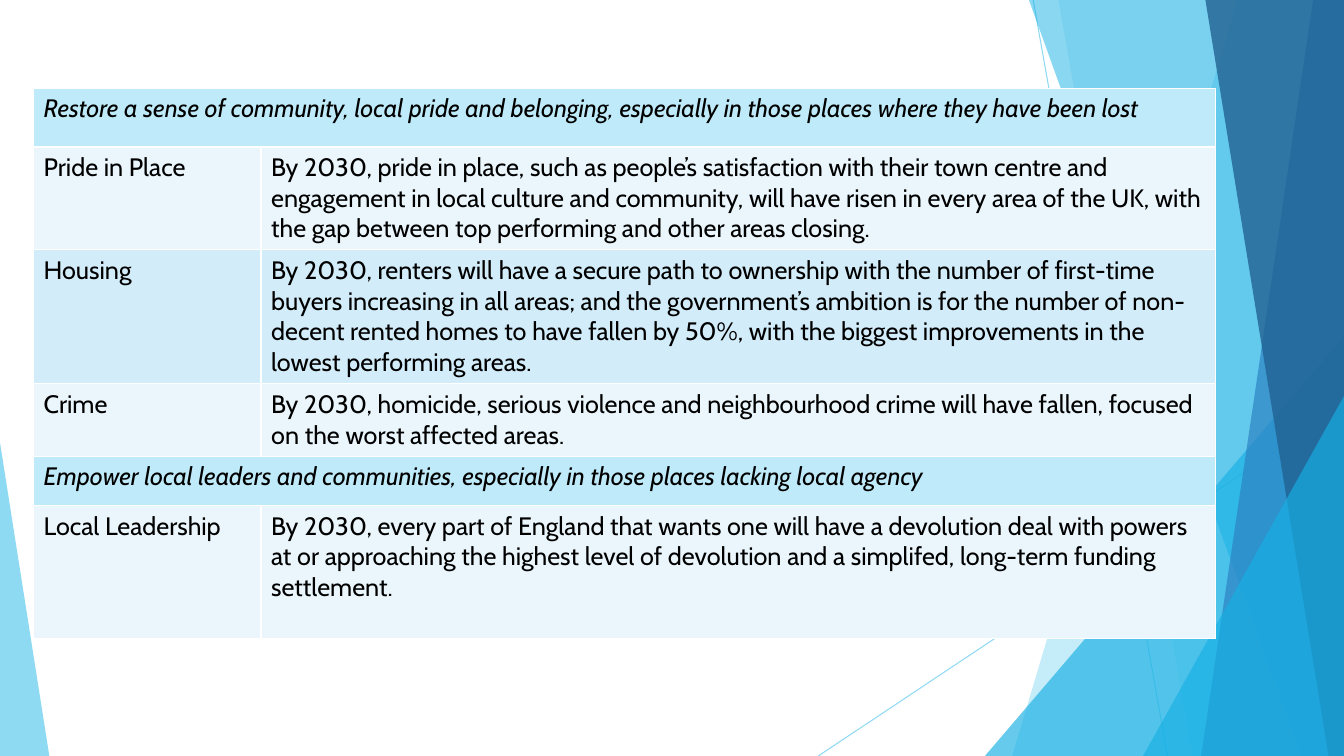
from lxml.etree import SubElement
from pptx import Presentation
from pptx.dml.color import RGBColor
from pptx.enum.shapes import MSO_CONNECTOR as Connector, MSO_SHAPE as Shape
from pptx.oxml import parse_xml
from pptx.oxml.ns import nsdecls, qn
from pptx.util import Pt

WIDTH, HEIGHT = 960, 540
FONT = "Cabin"
BLACK = RGBColor(0x00, 0x00, 0x00)
SKY = RGBColor(0x5F, 0xCB, 0xEF)
CYAN = RGBColor(0x17, 0xB0, 0xE4)
BLUE = RGBColor(0x2E, 0x83, 0xC3)
NAVY = RGBColor(0x22, 0x62, 0x92)
HEADING_FILL = RGBColor(0xBF, 0xEA, 0xF9)
PALE_FILL = RGBColor(0xEA, 0xF6, 0xFC)
TINTED_FILL = RGBColor(0xD2, 0xEC, 0xF9)

COLUMN_WIDTHS = [162.5, 682]
MISSIONS = [
    (42, HEADING_FILL, [
        "Restore a sense of community, local pride and belonging, especially in "
        "those places where they have been lost"]),
    (73.5, PALE_FILL, [
        "Pride in Place",
        "By 2030, pride in place, such as people’s satisfaction with their town "
        "centre and engagement in local culture and community, will have risen in "
        "every area of the UK, with the gap between top performing and other areas "
        "closing."]),
    (95.75, TINTED_FILL, [
        "Housing",
        "By 2030, renters will have a secure path to ownership with the number of "
        "first-time buyers increasing in all areas; and the government’s ambition "
        "is for the number of non-decent rented homes to have fallen by 50%, with "
        "the biggest improvements in the lowest performing areas."]),
    (51.75, PALE_FILL, [
        "Crime",
        "By 2030, homicide, serious violence and neighbourhood crime will have "
        "fallen, focused on the worst affected areas."]),
    (35.25, HEADING_FILL, [
        "Empower local leaders and communities, especially in those places lacking "
        "local agency"]),
    (95, PALE_FILL, [
        "Local Leadership",
        "By 2030, every part of England that wants one will have a devolution deal "
        "with powers at or approaching the highest level of devolution and a "
        "simplifed, long-term funding settlement."]),
]


def set_opacity(shape, percent):
    for color in shape.element.iter(qn("a:srgbClr")):
        SubElement(color, qn("a:alpha")).set("val", str(percent * 1000))


def paint(shape, color, opacity):
    shape.shadow.inherit = False
    shape.fill.solid()
    shape.fill.fore_color.rgb = color
    shape.line.fill.background()
    set_opacity(shape, opacity)


def add_ray(slide, start, end):
    ray = slide.shapes.add_connector(
        Connector.STRAIGHT, *(Pt(value) for value in start + end))
    ray.line.color.rgb = SKY
    ray.line.width = Pt(0.75)
    SubElement(ray.element.spPr, qn("a:effectLst"))
    set_opacity(ray, 70)


def add_band(slide, top_left, bottom_left, color, opacity):
    builder = slide.shapes.build_freeform(Pt(top_left), 0)
    corners = [(WIDTH, 0), (WIDTH, HEIGHT), (bottom_left, HEIGHT)]
    builder.add_line_segments([(Pt(x), Pt(y)) for x, y in corners])
    paint(builder.convert_to_shape(), color, opacity)


def add_wedge(slide, left, top, width, apex, color, opacity):
    wedge = slide.shapes.add_shape(
        Shape.ISOSCELES_TRIANGLE, Pt(left), Pt(top), Pt(width), Pt(HEIGHT - top))
    wedge.adjustments[0] = apex
    paint(wedge, color, opacity)


def add_facets(slide):
    add_ray(slide, (738, 0), (834, HEIGHT))
    add_ray(slide, (WIDTH, 290), (584.5, HEIGHT))
    add_band(slide, 884, 723, SKY, 36)
    add_band(slide, 756, 852, SKY, 20)
    add_wedge(slide, 703.5, 240, WIDTH - 703.5, 1, CYAN, 66)
    add_band(slide, 735, 929.5, CYAN, 50)
    add_band(slide, 938, 858, BLUE, 70)
    add_band(slide, 861, 949, NAVY, 80)
    add_wedge(slide, 816.5, 283, WIDTH - 816.5, 1, CYAN, 66)
    add_wedge(slide, 0, 316, 35.25, 0, SKY, 70)


def style_cell(cell, fill_color, italic):
    cell.fill.solid()
    cell.fill.fore_color.rgb = fill_color
    properties = cell._tc.get_or_add_tcPr()
    for index, side in enumerate(["lnL", "lnR", "lnT", "lnB"]):
        properties.insert(index, parse_xml(
            f'<a:{side} {nsdecls("a")} w="12700"><a:solidFill>'
            f'<a:srgbClr val="FFFFFF"/></a:solidFill></a:{side}>'))
    for paragraph in cell.text_frame.paragraphs:
        for run in paragraph.runs:
            run.font.name = FONT
            run.font.size = Pt(18)
            run.font.italic = italic
            run.font.color.rgb = BLACK


def add_missions(slide, left, top):
    total_height = sum(height for height, _, _ in MISSIONS)
    table = slide.shapes.add_table(
        len(MISSIONS), len(COLUMN_WIDTHS), Pt(left), Pt(top),
        Pt(sum(COLUMN_WIDTHS)), Pt(total_height)).table
    table.first_row = False
    table.horz_banding = False
    for column, width in zip(table.columns, COLUMN_WIDTHS):
        column.width = Pt(width)
    for row_index, (height, fill_color, texts) in enumerate(MISSIONS):
        row = table.rows[row_index]
        row.height = Pt(height)
        is_heading = len(texts) == 1
        if is_heading:
            row.cells[0].merge(row.cells[1])
        for cell, text in zip(row.cells, texts):
            cell.text_frame.text = text
        for cell in row.cells:
            style_cell(cell, fill_color, is_heading)


def main():
    presentation = Presentation()
    presentation.slide_width = Pt(WIDTH)
    presentation.slide_height = Pt(HEIGHT)
    slide = presentation.slides.add_slide(presentation.slide_layouts[6])
    add_facets(slide)
    add_missions(slide, 24, 63)
    presentation.save("out.pptx")


if __name__ == "__main__":
    main()
